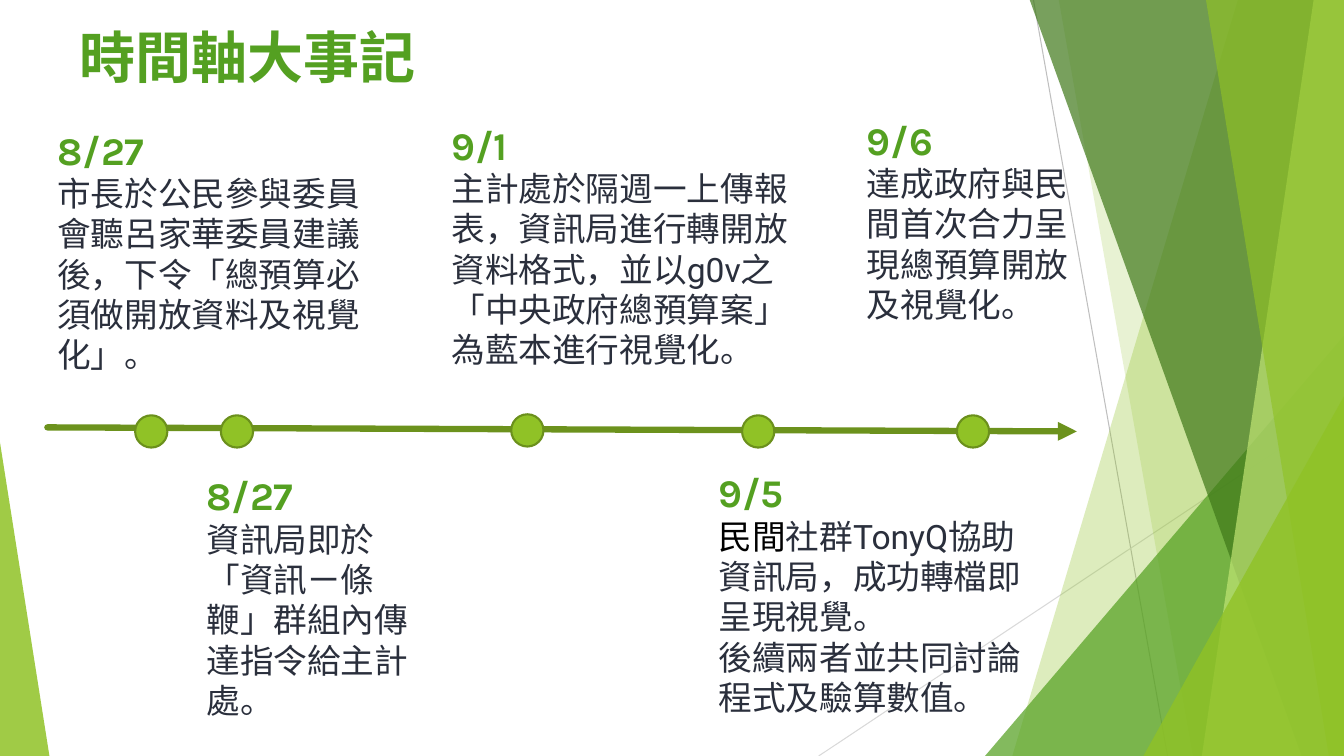
import pptx
import pptx.dml.color
import pptx.enum.shapes
import pptx.enum.text
import pptx.oxml
import pptx.oxml.ns
import pptx.util
from pptx.util import Inches

RGBColor = pptx.dml.color.RGBColor
Shapes = pptx.enum.shapes.MSO_SHAPE

LIME = RGBColor(0x90, 0xC2, 0x26)
GREEN = RGBColor(0x54, 0xA0, 0x21)
FOREST = RGBColor(0x3F, 0x78, 0x19)
PALE_LIME = RGBColor(0xC0, 0xE4, 0x74)
AXIS = RGBColor(0x6C, 0x92, 0x1D)
DOT_EDGE = RGBColor(0x6B, 0x90, 0x1C)
INK = RGBColor(0x2A, 0x2F, 0x3C)
BLACK = RGBColor(0, 0, 0)
GREY = RGBColor(0xBF, 0xBF, 0xBF)
LIGHT_GREY = RGBColor(0xD9, 0xD9, 0xD9)

WIDTH, HEIGHT, TOP = 13.33, 7.5, -0.01
DOT_SIZE = 0.32

# Dot positions: left, top
DOTS = [(1.34, 4.12), (2.19, 4.12), (5.07, 4.11), (7.36, 4.12), (9.49, 4.12)]

# Events: left, top, width, height, date, paragraphs of (text, font, colour)
EVENTS = [
    (0.47, 1.2, 3.35, 2.89, "8/27",
     [[("市長於公民參與委員會聽呂家華委員建議後，下令「總預算必須做開放資料及視覺化」。", "Roboto", INK)]]),
    (1.95, 4.63, 2.37, 2.52, "8/27",
     [[("資訊局即於「資訊ㄧ條鞭」群組內傳達指令給主計處。", "Roboto", INK)]]),
    (4.38, 1.15, 3.55, 3, "9/1",
     [[("主計處於隔週一上傳報表，資訊局進行轉開放資料格式，並以g0v之「中央政府總預算案」為藍本進行視覺化。",
        "Roboto", INK)]]),
    (7.03, 4.6, 3.2, 3, "9/5",
     [[("民間", "Karla", BLACK),
       ("社群TonyQ協助資訊局，成功轉檔即呈現視覺。", "Roboto", INK)],
      [("後續兩者並共同討論程式及驗算數值。", "Roboto", INK)]]),
    (8.5, 1.1, 2.39, 2.59, "9/6",
     [[("達成政府與民間首次合力呈現總預算開放及視覺化。", "Roboto", INK)]]),
]


def add_child(parent, tag, **attributes):
    child = pptx.oxml.parse_xml(f"<a:{tag} {pptx.oxml.ns.nsdecls('a')}/>")
    for name, value in attributes.items():
        child.set(name, value)
    parent.append(child)


def paint(shape, color, opacity):
    """Plain translucent fill without outline."""
    shape.shadow.inherit = False
    shape.fill.solid()
    shape.fill.fore_color.rgb = color
    shape.line.fill.background()
    color_element = shape.fill._xPr.find(".//" + pptx.oxml.ns.qn("a:srgbClr"))
    add_child(color_element, "alpha", val=str(opacity * 1000))


def add_band(page, top_left, bottom_left, color, opacity):
    """Band that reaches from a slanted left edge to the right slide edge."""
    builder = page.shapes.build_freeform(Inches(top_left), Inches(TOP))
    corners = [(WIDTH, TOP), (WIDTH, HEIGHT), (bottom_left, HEIGHT)]
    builder.add_line_segments([(Inches(x), Inches(y)) for x, y in corners])
    paint(builder.convert_to_shape(), color, opacity)


def add_triangle(page, left, top, width, apex, color, opacity):
    """Triangle that stands on the bottom edge of the slide."""
    triangle = page.shapes.add_shape(
        Shapes.ISOSCELES_TRIANGLE, Inches(left), Inches(top),
        Inches(width), Inches(HEIGHT - top))
    triangle.adjustments[0] = apex
    paint(triangle, color, opacity)


def add_line(page, start, end, color, width):
    line = page.shapes.add_connector(
        pptx.enum.shapes.MSO_CONNECTOR.STRAIGHT,
        *(Inches(value) for value in (*start, *end)))
    line.line.color.rgb = color
    line.line.width = pptx.util.Pt(width)
    add_child(line._element.spPr, "effectLst")
    return line


def add_axis(page):
    axis = add_line(page, (0.47, 4.24), (10.68, 4.28), AXIS, 4.5)
    outline = axis.line._get_or_add_ln()
    outline.set("cap", "rnd")
    add_child(outline, "tailEnd", type="triangle")


def add_dot(page, left, top):
    dot = page.shapes.add_shape(
        Shapes.OVAL, Inches(left), Inches(top), Inches(DOT_SIZE), Inches(DOT_SIZE))
    dot.shadow.inherit = False
    dot.fill.solid()
    dot.fill.fore_color.rgb = LIME
    dot.line.color.rgb = DOT_EDGE
    dot.line.width = pptx.util.Pt(1.5)


def add_span(para, text, size, font, color, bold=False):
    span = para.add_run()
    span.text = text
    span.font.size = pptx.util.Pt(size)
    span.font.name = font
    span.font.color.rgb = color
    span.font.bold = bold


def add_text(page, left, top, width, height, heading, heading_size, body=()):
    box = page.shapes.add_textbox(
        Inches(left), Inches(top), Inches(width), Inches(height))
    frame = box.text_frame
    frame.word_wrap = True
    frame.vertical_anchor = pptx.enum.text.MSO_ANCHOR.TOP
    add_span(frame.paragraphs[0], heading, heading_size, "Karla", GREEN, True)
    for spans in body:
        para = frame.add_paragraph()
        for text, font, color in spans:
            add_span(para, text, 24, font, color)


def add_backdrop(page):
    add_line(page, (10.25, 0), (11.58, HEIGHT), GREY, 0.75)
    add_line(page, (WIDTH, 4.03), (8.12, HEIGHT), LIGHT_GREY, 0.75)
    add_band(page, 12.28, 10.04, LIME, 30)
    add_band(page, 10.5, 11.83, LIME, 20)
    add_triangle(page, 9.77, 3.33, 3.56, 1, GREEN, 72)
    add_band(page, 10.21, 12.91, FOREST, 70)
    add_band(page, 13.03, 11.92, PALE_LIME, 70)
    add_band(page, 11.96, 13.18, LIME, 65)
    add_triangle(page, 11.34, 3.93, 1.99, 1, LIME, 80)
    add_triangle(page, 0, 4.39, 0.49, 0, LIME, 85)


def main():
    deck = pptx.Presentation()
    deck.slide_width, deck.slide_height = Inches(WIDTH), Inches(HEIGHT)
    page = deck.slides.add_slide(deck.slide_layouts[6])

    # Backdrop and title
    add_backdrop(page)
    add_text(page, 0.69, 0.17, 9.4, 1.44, "時間軸大事記", 40)

    # Timeline
    add_axis(page)
    for left, top in DOTS:
        add_dot(page, left, top)

    # Events above and below the axis
    for left, top, width, height, date, body in EVENTS:
        add_text(page, left, top, width, height, date, 28, body)

    deck.save("out.pptx")


if __name__ == "__main__":
    main()
